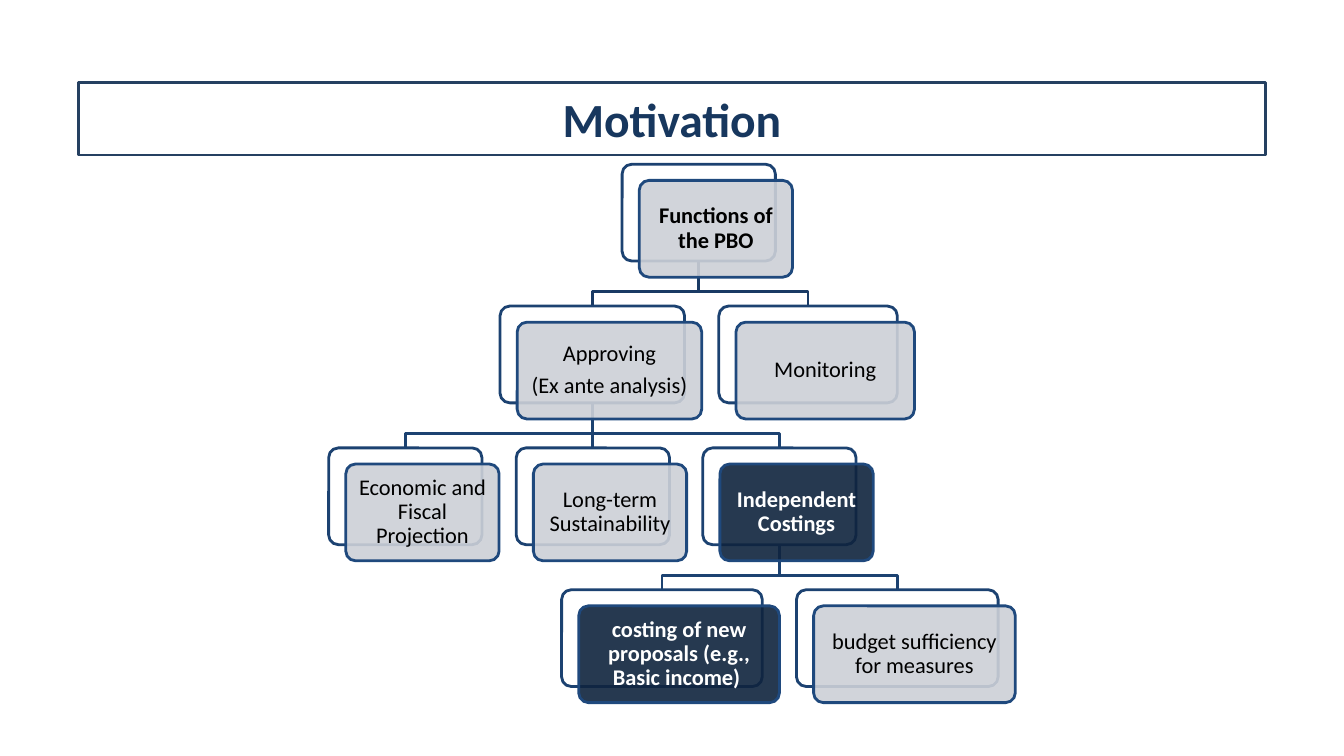
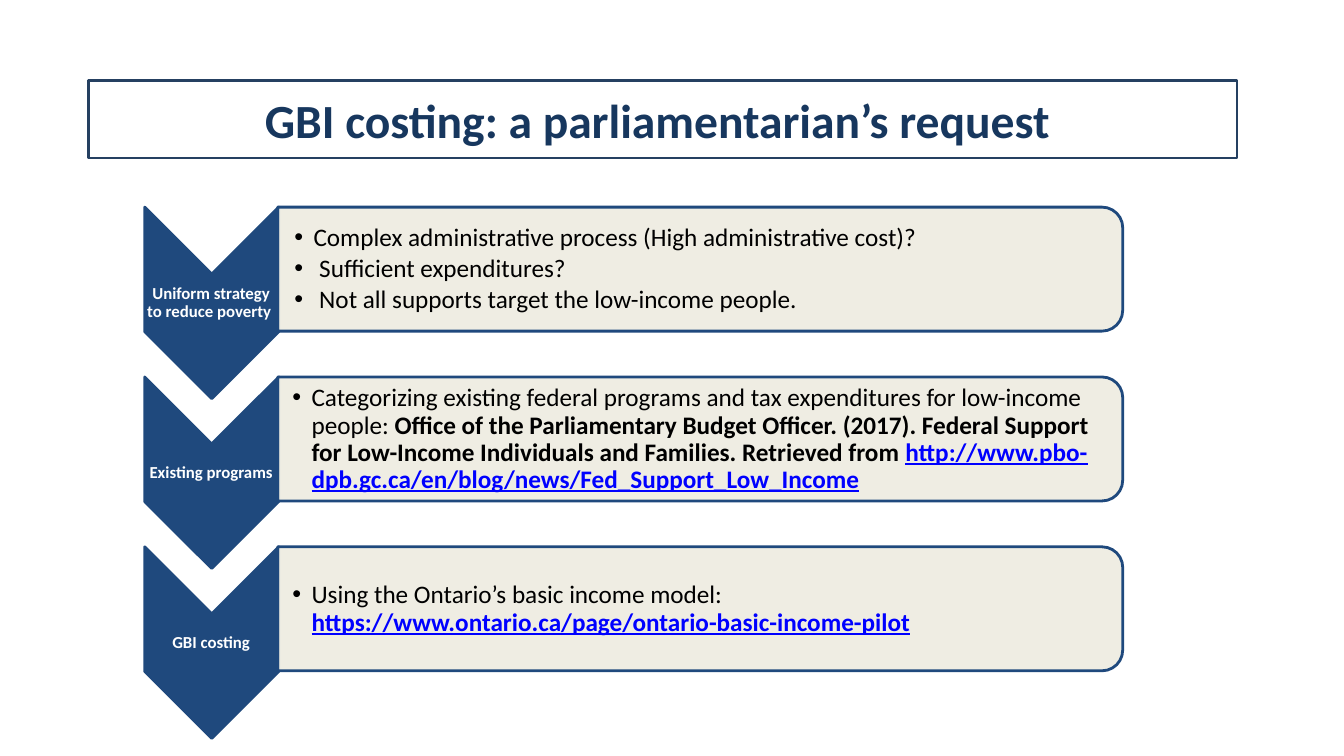
from lxml import etree
from pptx import Presentation
from pptx import util as u
from pptx.dml.color import RGBColor
from pptx.enum import shapes, text
from pptx.oxml import ns

rgb = RGBColor.from_string
Inches, Pt = u.Inches, u.Pt
KIND = shapes.MSO_SHAPE
MID, LEFT = text.PP_ALIGN.CENTER, text.PP_ALIGN.LEFT

NAVY, BLUE, EDGE = "17375E", "1F497D", "1C4271"
GREY, DARK, CREAM = "CDD0D7", "0F243E", "EEECE1"
BLACK, WHITE, LINK = "000000", "FFFFFF", "0000FF"


def paint(shape, fill, line, width=2, alpha=None):
    """Set fill, outline and, in percent, opacity; drop the shadow."""
    shape.shadow.inherit = False
    if fill:
        shape.fill.solid()
        shape.fill.fore_color.rgb = rgb(fill)
    else:
        shape.fill.background()
    shape.line.color.rgb = rgb(line)
    shape.line.width = Pt(width)
    if alpha:
        tone = shape.fill._xPr.find(".//" + ns.qn("a:srgbClr"))
        etree.SubElement(tone, ns.qn("a:alpha"), val=str(alpha * 1000))


def write(frame, paras, size, color, pad, align=MID, space=0.9, after=0, indent=0):
    """Fill a frame; each paragraph is a list of (words, font values)."""
    look = {"word_wrap": True, "vertical_anchor": text.MSO_ANCHOR.MIDDLE,
            "auto_size": text.MSO_AUTO_SIZE.NONE}
    sides = ("margin_left", "margin_top", "margin_right", "margin_bottom")
    look.update((side, Inches(gap)) for side, gap in zip(sides, pad))
    for name, value in look.items():
        setattr(frame, name, value)
    for i, runs in enumerate(paras):
        para = frame.add_paragraph() if i else frame.paragraphs[0]
        para.alignment, para.line_spacing = align, space
        para.space_before, para.space_after = Pt(0), Pt(after)
        if indent:
            props = para._p.get_or_add_pPr()
            props.set("marL", str(Inches(indent)))
            props.set("indent", str(-Inches(indent)))
            etree.SubElement(props, ns.qn("a:buFont"), typeface="Arial")
            etree.SubElement(props, ns.qn("a:buChar"), char="•")
        for words, extra in runs:
            run = para.add_run()
            run.text = words
            style = {"name": "Calibri", "size": Pt(size), "bold": False, **extra}
            run.font.color.rgb = rgb(style.pop("color", color))
            for name, value in style.items():
                setattr(run.font, name, value)


deck = Presentation()
deck.slide_width, deck.slide_height = Inches(13.33), Inches(7.5)
BOLD = {"bold": True}
URL = {"bold": True, "underline": True, "color": LINK}

# Slides with their framed titles
pages = []
for words, box in (
    ("Motivation", (0.78, 0.82, 11.77, 0.72)),
    ("GBI costing: a parliamentarian’s request ", (0.88, 0.8, 11.39, 0.77)),
):
    page = deck.slides.add_slide(deck.slide_layouts[5])
    title = page.shapes.title
    title.left, title.top, title.width, title.height = map(Inches, box)
    paint(title, None, "254061", 1.75)
    write(title.text_frame, [[(words, BOLD)]], 34, NAVY, (0.1, 0.05, 0.1, 0.05), space=1)
    pages.append(page.shapes)
tree, steps = pages

# Function tree: key -> parent, level, left, width, lines, fill, bold
nodes = {
    "root": (None, 0, 6.17, 1.52, ["Functions of the PBO"], GREY, True),
    "ante": ("root", 1, 4.96, 1.83, ["Approving", "(Ex ante analysis)"], GREY, False),
    "fiscal": ("ante", 2, 3.26, 1.52, ["Economic and Fiscal Projection"], GREY, False),
    "long": ("ante", 2, 5.12, 1.52, ["Long-term Sustainability"], GREY, False),
    "cost": ("ante", 2, 6.97, 1.52, ["Independent Costings"], DARK, True),
    "new": ("cost", 3, 5.57, 1.99, ["costing of new proposals (e.g., Basic income) "], DARK, True),
    "budget": ("cost", 3, 7.9, 2, ["budget sufficiency for measures"], GREY, False),
    "watch": ("root", 1, 7.13, 1.77, ["Monitoring"], GREY, False),
}
TOP, STEP, TALL = 1.63, 1.407, 0.96

for parent, level, left, wide, *_ in nodes.values():
    if not parent:
        continue
    start = nodes[parent][2] + nodes[parent][3] / 2
    end = left + wide / 2
    low = TOP + level * STEP
    high, bend = low - STEP + TALL, low - 0.145
    if abs(start - end) < 0.05:
        link = tree.add_connector(shapes.MSO_CONNECTOR.STRAIGHT, Inches(end), Inches(high),
                                  Inches(end), Inches(low))
        link.line.color.rgb, link.line.width = rgb(EDGE), Pt(2)
        etree.SubElement(link._element.spPr, ns.qn("a:effectLst"))
    else:
        path = tree.build_freeform(Inches(start), Inches(high))
        path.add_line_segments([(Inches(x), Inches(y)) for x, y in
                                ((start, bend), (end, bend), (end, low))], close=False)
        paint(path.convert_to_shape(), None, "193A64" if level == 1 else EDGE)

for parent, level, left, wide, lines, fill, bold in nodes.values():
    top = TOP + level * STEP
    for dx, dy, tone, edge, alpha in ((0, 0, WHITE, EDGE, None), (0.17, 0.16, fill, BLUE, 90)):
        card = tree.add_shape(KIND.ROUNDED_RECTANGLE, Inches(left + dx), Inches(top + dy),
                              Inches(wide), Inches(TALL))
        card.adjustments[0] = 0.1
        paint(card, tone, edge, alpha=alpha)
    write(card.text_frame, [[(line, {"bold": bold})] for line in lines], 16,
          WHITE if fill == DARK else BLACK, [0.07] * 4, after=5.6)

# Chevron steps: label, left inset of the list, bullets
rows = [
    ("Uniform strategy to reduce poverty ", 0.16, [
        [("Complex administrative process (High administrative cost)?", {})],
        [(" Sufficient expenditures?", {})],
        [(" Not all supports target the low-income people.", {})]]),
    ("Existing programs", 0.14, [
        [("Categorizing existing federal programs and tax expenditures for low-income people:", {}),
         (" Office of the Parliamentary Budget Officer. (2017). Federal Support for Low-Income "
          "Individuals and Families. Retrieved from ", BOLD),
         ("http://www.pbo-dpb.gc.ca/en/blog/news/Fed_Support_Low_Income", URL)]]),
    ("GBI costing", 0.14, [
        [("Using the Ontario’s basic income model: ", {}),
         ("https://www.ontario.ca/page/ontario-basic-income-pilot", URL)]]),
]
for i, (label, inset, items) in enumerate(rows):
    top = 2.05 + 1.685 * i
    # Both outlines are turned a quarter, so their text sits in upright boxes
    for kind, x, y, wide, tall, fill, alpha in (
        (KIND.CHEVRON, 1.15, 0.29, 1.9, 1.33, BLUE, None),
        (KIND.ROUND_2_SAME_RECTANGLE, 6.33, -3.57, 1.23, 8.38, CREAM, 90),
    ):
        shape = steps.add_shape(kind, Inches(x), Inches(top + y), Inches(wide), Inches(tall))
        shape.rotation = 90
        paint(shape, fill, BLUE, alpha=alpha)
    tag = steps.add_textbox(Inches(1.43), Inches(top + 0.67), Inches(1.33), Inches(0.57))
    write(tag.text_frame, [[(label, BOLD)]], 12, WHITE, [0.01] * 4, after=4.2)
    body = steps.add_textbox(Inches(2.76), Inches(top + 0.07), Inches(8.32), Inches(1.11))
    write(body.text_frame, items, 18, BLACK, (inset, 0.01, 0.01, 0.01), LEFT,
          after=2.7, indent=0.19)

deck.save("out.pptx")
